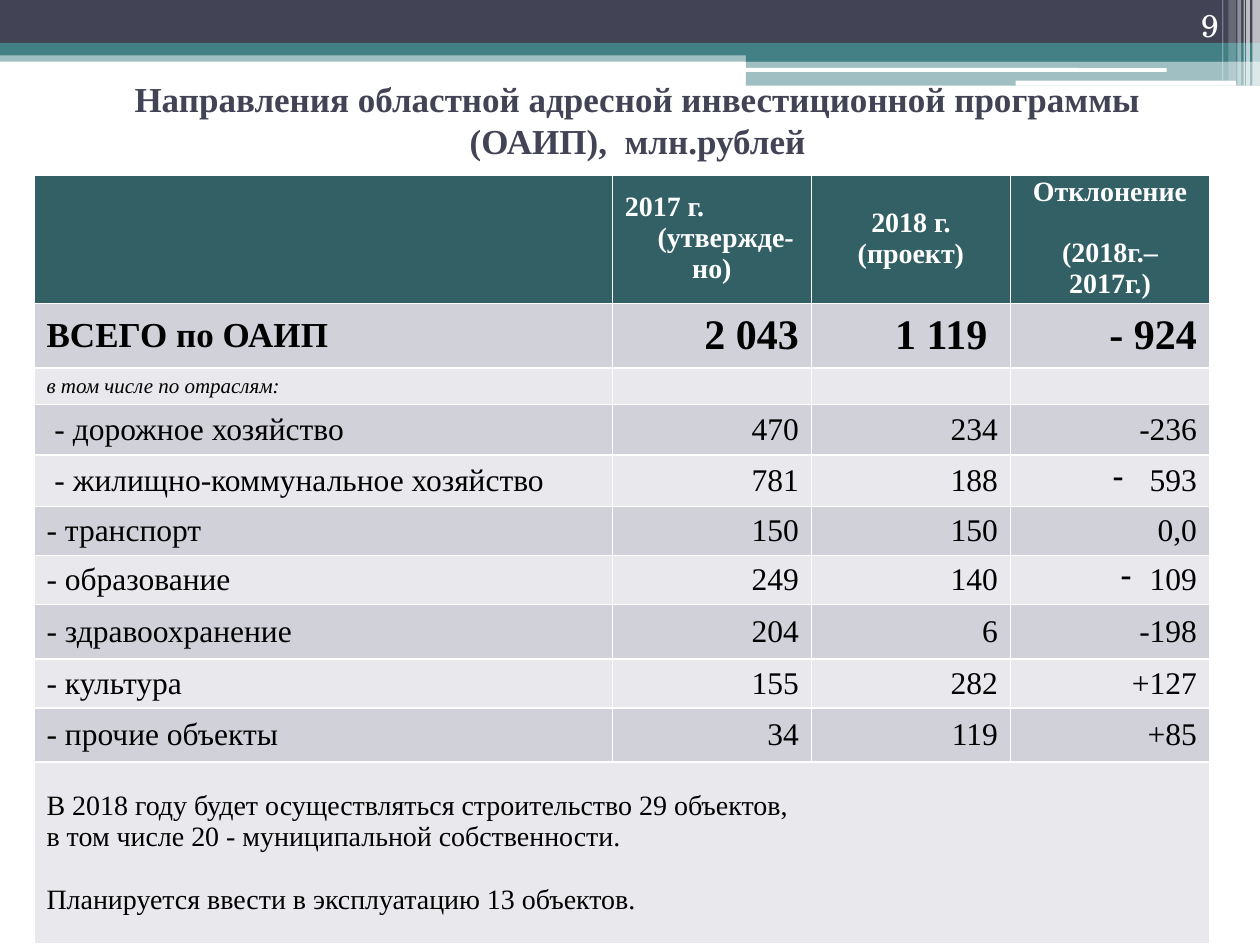
from lxml import etree
from pptx import Presentation
from pptx.dml.color import RGBColor
from pptx.enum.shapes import MSO_SHAPE
from pptx.enum.text import MSO_ANCHOR, PP_ALIGN
from pptx.oxml.ns import qn
from pptx.util import Inches, Pt

RECTANGLE, ROUNDED = MSO_SHAPE.RECTANGLE, MSO_SHAPE.ROUNDED_RECTANGLE
LEFT, CENTER, RIGHT = PP_ALIGN.LEFT, PP_ALIGN.CENTER, PP_ALIGN.RIGHT
MIDDLE, BOTTOM = MSO_ANCHOR.MIDDLE, MSO_ANCHOR.BOTTOM

SERIF = "Times New Roman"
NAVY, TEAL, WHITE, BLACK = "424456", "438086", "FFFFFF", "000000"
HEADER_FILL, DARK_BAND, LIGHT_BAND = "326065", "D1D1DA", "E9E9ED"

# left, top, width, height, colour, opacity in percent
BARS = [
    (0, 0.4, 10, 0.09, TEAL, 50),
    (0, 0, 10, 0.34, NAVY, 100),
    (0, 0.34, 10, 0.1, TEAL, 100),
    (5.92, 0.39, 4.08, 0.1, TEAL, 100),
    (5.92, 0.48, 4.08, 0.2, TEAL, 50),
]
ROUNDED_BARS = [
    (5.91, 0.54, 3.35, 0.03, WHITE, 100),
    (8.06, 0.64, 1.75, 0.04, WHITE, 100),
]
# left, width, height, opacity in percent
STRIPES = [
    (9.94, 0.06, 0.68, 65), (9.89, 0.03, 0.68, 65), (9.87, 0.01, 0.68, 60),
    (9.82, 0.03, 0.68, 40), (9.75, 0.06, 0.64, 20), (9.7, 0.01, 0.64, 30),
]

COLUMN_WIDTHS = [4.59, 1.58, 1.58, 1.58]
ROW_HEIGHTS = [1.02, 0.51, 0.29, 0.4, 0.41, 0.39, 0.39, 0.43, 0.39, 0.43, 1.44]
HEADERS = [
    [],
    ["2017 г.", "(утвержде-но)"],
    ["2018 г.", "(проект)"],
    ["Отклонение", "(2018г.–2017г.)"],
]
TOTALS = ["ВСЕГО по ОАИП", "2 043", " 1 119 ", "- 924"]
SECTORS = [
    [" - дорожное хозяйство", "470", "234", "-236"],
    [" - жилищно-коммунальное хозяйство", "781", "188", " 593"],
    ["- транспорт", "150", "150", "0,0"],
    ["- образование", "249", "140", "109"],
    ["- здравоохранение", "204", "6", "-198"],
    ["- культура", "155", "282", "+127"],
    ["- прочие объекты", "34", "119", "+85"],
]
DASH_BULLETED = {" 593", "109"}
NOTES = [
    "В 2018 году будет осуществляться строительство 29 объектов,",
    "в том числе 20 - муниципальной собственности.",
    "Планируется ввести в эксплуатацию 13 объектов.",
]


def color(value):
    return RGBColor.from_string(value)


def add_bar(slide, kind, left, top, width, height, fill, opacity):
    bar = slide.shapes.add_shape(
        kind, Inches(left), Inches(top), Inches(width), Inches(height))
    bar.shadow.inherit = False
    bar.line.fill.background()
    bar.fill.solid()
    bar.fill.fore_color.rgb = color(fill)
    if opacity < 100:
        fill_color = bar.element.spPr.find(qn("a:solidFill"))[0]
        etree.SubElement(fill_color, qn("a:alpha"), val=str(opacity * 1000))


def write(frame, lines, size, align=LEFT, font_color=BLACK, bold=False,
          italic=False, font_name=SERIF):
    """Fill a text frame, one paragraph per line, and return the paragraphs."""
    frame.word_wrap = True
    for number, line in enumerate(lines):
        paragraph = frame.add_paragraph() if number else frame.paragraphs[0]
        paragraph.text = line
        paragraph.alignment = align
        font = paragraph.font
        font.name, font.size = font_name, Pt(size)
        font.bold, font.italic = bold, italic
        font.color.rgb = color(font_color)
    return frame.paragraphs


def indent(paragraph, first_line, left=0):
    properties = paragraph._p.get_or_add_pPr()
    properties.set("marL", str(Inches(left)))
    properties.set("indent", str(Inches(first_line)))
    return properties


def add_dash_bullet(paragraph):
    properties = indent(paragraph, -0.23, 0.23)
    bullet = etree.Element(qn("a:buChar"), char="-")
    properties.find(qn("a:defRPr")).addprevious(bullet)


def fill_row(table, row, texts, label_size, value_size, **style):
    for column, text in enumerate(texts):
        align, size = (RIGHT, value_size) if column else (LEFT, label_size)
        cell = table.cell(row, column)
        paragraph = write(cell.text_frame, [text], size, align, **style)[0]
        if text in DASH_BULLETED:
            add_dash_bullet(paragraph)
        if not text:
            cell.margin_top = cell.margin_bottom = 0


def fill_header(table):
    for column, lines in enumerate(HEADERS):
        cell = table.cell(0, column)
        cell.margin_top, cell.margin_bottom = 0, Inches(0.02)
        write(cell.text_frame, lines, 16, CENTER, WHITE, bold=True)
    approved = table.cell(0, 1).text_frame.paragraphs
    approved[0].alignment = LEFT
    indent(approved[1], 0.22)
    table.cell(0, 3).text_frame.paragraphs[0].space_after = Pt(17)


def add_budget_table(slide):
    rows, columns = len(ROW_HEIGHTS), len(COLUMN_WIDTHS)
    table = slide.shapes.add_table(
        rows, columns, Inches(0.27), Inches(1.39),
        Inches(sum(COLUMN_WIDTHS)), Inches(sum(ROW_HEIGHTS))).table
    for column, width in zip(table.columns, COLUMN_WIDTHS):
        column.width = Inches(width)
    for number, height in enumerate(ROW_HEIGHTS):
        table.rows[number].height = Inches(height)
        band = DARK_BAND if number % 2 else LIGHT_BAND
        for cell in table.rows[number].cells:
            cell.vertical_anchor = MIDDLE
            cell.fill.solid()
            cell.fill.fore_color.rgb = color(band if number else HEADER_FILL)

    fill_header(table)
    fill_row(table, 1, TOTALS, 20, 24, bold=True)
    fill_row(table, 2, ["в том числе по отраслям:", "", "", ""], 12, 12, italic=True)
    for row, texts in enumerate(SECTORS, start=3):
        fill_row(table, row, texts, 18, 18)

    # Closing notes across the whole width
    notes_cell = table.cell(rows - 1, 0)
    notes_cell.merge(table.cell(rows - 1, columns - 1))
    write(notes_cell.text_frame, NOTES, 16)[-1].space_before = Pt(18)


def add_title(slide):
    title = slide.shapes.title
    title.left, title.top = Inches(0.12), Inches(0.6)
    title.width, title.height = Inches(9.88), Inches(0.7)
    title.text_frame.vertical_anchor = MIDDLE
    write(title.text_frame,
          ["Направления областной адресной инвестиционной программы\v"
           "(ОАИП),  млн.рублей"], 20, CENTER, NAVY, bold=True)
    # Bring the title in front of the bars
    title.element.getparent().append(title.element)


def add_page_number(slide):
    box = slide.shapes.add_textbox(Inches(8.94), 0, Inches(0.83), Inches(0.4))
    box.text_frame.vertical_anchor = BOTTOM
    write(box.text_frame, ["9"], 18, RIGHT, WHITE, font_name="TeX Gyre Schola")


def main():
    presentation = Presentation()
    presentation.slide_width, presentation.slide_height = Inches(10), Inches(7.5)
    slide = presentation.slides.add_slide(presentation.slide_layouts[5])

    # Decorated top band
    for bar in BARS:
        add_bar(slide, RECTANGLE, *bar)
    for bar in ROUNDED_BARS:
        add_bar(slide, ROUNDED, *bar)
    for left, width, height, opacity in STRIPES:
        add_bar(slide, RECTANGLE, left, 0, width, height, WHITE, opacity)

    add_title(slide)
    add_budget_table(slide)
    add_page_number(slide)
    presentation.save("out.pptx")


if __name__ == "__main__":
    main()
